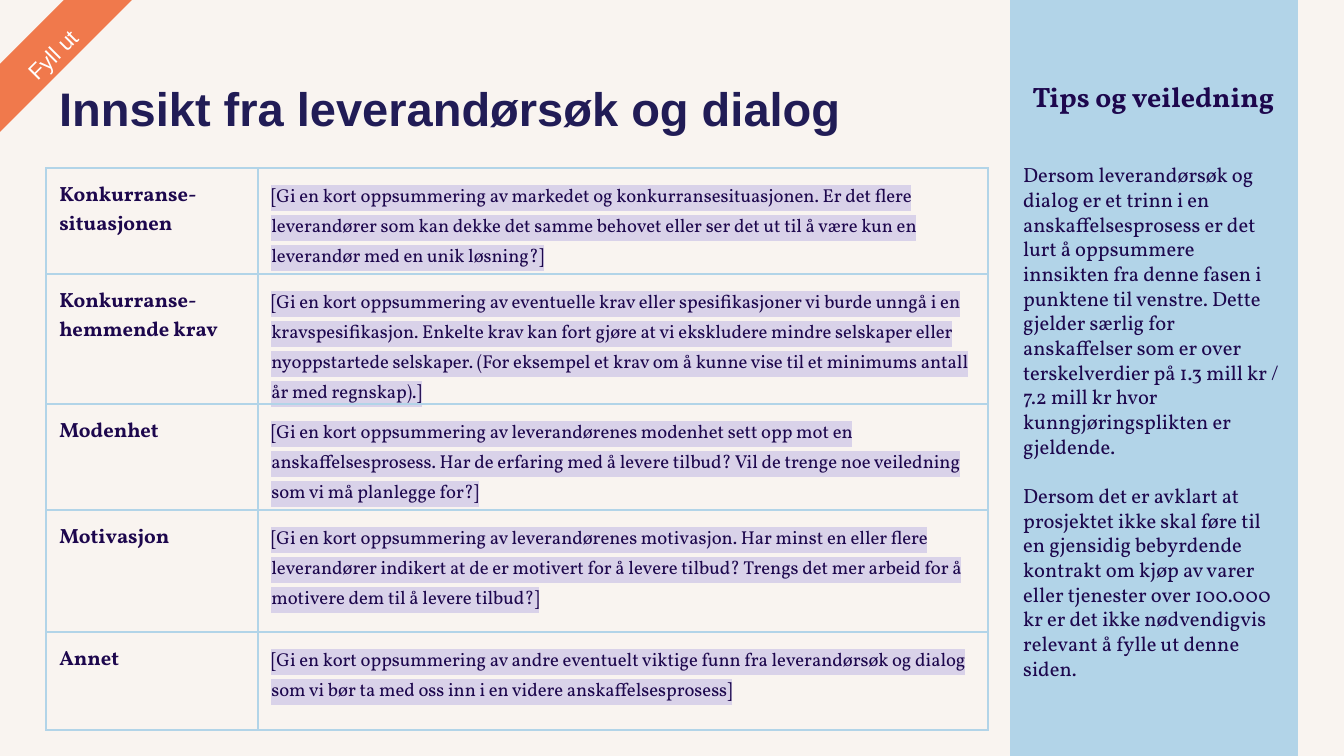
from lxml import etree
from pptx import Presentation, util as u
from pptx.dml.color import RGBColor
from pptx.enum import shapes, text
from pptx.oxml.ns import qn

PX = 914400 / 134.4
INK, NAVY, BLUE = "1D074D", "211C56", "B2D4E8"
SAND, LILAC, CORAL, WHITE = "F9F4F0", "D9D2E9", "F0794C", "FFFFFF"
SERIF, SANS = "Vollkorn", "Arial"
PAD = u.Inches(0.1)

ROWS = [
    (106, "Konkurranse- situasjonen",
     "[Gi en kort oppsummering av markedet og konkurransesituasjonen. Er det flere "
     "leverandører som kan dekke det samme behovet eller ser det ut til å være kun en "
     "leverandør med en unik løsning?]"),
    (106, "Konkurranse- hemmende krav",
     "[Gi en kort oppsummering av eventuelle krav eller spesifikasjoner vi burde unngå i en "
     "kravspesifikasjon. Enkelte krav kan fort gjøre at vi ekskludere mindre selskaper eller "
     "nyoppstartede selskaper. (For eksempel et krav om å kunne vise til et minimums antall "
     "år med regnskap).]"),
    (106, "Modenhet",
     "[Gi en kort oppsummering av leverandørenes modenhet sett opp mot en "
     "anskaffelsesprosess. Har de erfaring med å levere tilbud? Vil de trenge noe veiledning "
     "som vi må planlegge for?]"),
    (122, "Motivasjon",
     "[Gi en kort oppsummering av leverandørenes motivasjon. Har minst en eller flere "
     "leverandører indikert at de er motivert for å levere tilbud? Trengs det mer arbeid for å "
     "motivere dem til å levere tilbud?]"),
    (98, "Annet",
     "[Gi en kort oppsummering av andre eventuelt viktige funn fra leverandørsøk og dialog "
     "som vi bør ta med oss inn i en videre anskaffelsesprosess]"),
]
TIPS = [
    "Dersom leverandørsøk og dialog er et trinn i en anskaffelsesprosess er det lurt å "
    "oppsummere innsikten fra denne fasen i punktene til venstre. Dette gjelder særlig for "
    "anskaffelser som er over terskelverdier på 1.3 mill kr / 7.2 mill kr hvor "
    "kunngjøringsplikten er gjeldende.",
    "Dersom det er avklart at prosjektet ikke skal føre til en gjensidig bebyrdende kontrakt "
    "om kjøp av varer eller tjenester over 100.000 kr er det ikke nødvendigvis relevant å "
    "fylle ut denne siden.",
]


def px(*vals):
    return [u.Emu(round(v * PX)) for v in vals]


def paint(fill, color):
    fill.solid()
    fill.fore_color.rgb = RGBColor.from_string(color)


def style(para, size, face=SERIF, color=INK, bold=False, align=None, lead=None):
    font = para.font
    font.size, font.name, font.bold = u.Pt(size), face, bold
    font.color.rgb = RGBColor.from_string(color)
    para.alignment = align
    para.line_spacing = lead


def label(slide, box, lines, anchor=text.MSO_ANCHOR.TOP, gap=0, **look):
    item = slide.shapes.add_textbox(*px(*box))
    frame = item.text_frame
    frame.word_wrap = True
    frame.vertical_anchor = anchor
    frame.margin_left = frame.margin_right = PAD
    frame.margin_top = frame.margin_bottom = PAD
    frame.text = "\n".join(lines)
    for n, para in enumerate(frame.paragraphs):
        style(para, **look)
        if n:
            para.space_before = u.Pt(gap)
    return item


def block(slide, kind, box, color):
    item = slide.shapes.add_shape(kind, *px(*box))
    item.shadow.inherit = False
    paint(item.fill, color)
    item.line.fill.background()


def mark(run, color):
    tag = etree.SubElement(run._r.get_or_add_rPr(), qn("a:highlight"))
    etree.SubElement(tag, qn("a:srgbClr"), val=color)


def frame_cell(cell):
    props = cell._tc.get_or_add_tcPr()
    for side in ("lnL", "lnR", "lnT", "lnB"):
        line = etree.SubElement(props, qn("a:" + side), w=str(u.Pt(0.75)))
        fill = etree.SubElement(line, qn("a:solidFill"))
        etree.SubElement(fill, qn("a:srgbClr"), val=BLUE)
    cell.fill.background()
    cell.margin_left = cell.margin_right = PAD
    cell.margin_top = cell.margin_bottom = PAD


def grid(slide, x, y, widths):
    high = sum(row[0] for row in ROWS)
    table = slide.shapes.add_table(
        len(ROWS), len(widths), *px(x, y, sum(widths), high)).table
    table.first_row = table.horz_banding = False
    for col, width in zip(table.columns, px(*widths)):
        col.width = width
    for row, (tall, head, body) in zip(table.rows, ROWS):
        row.height = px(tall)[0]
        for cell, words in zip(row.cells, (head, body)):
            frame_cell(cell)
            cell.text = words
        left, right = (cell.text_frame.paragraphs[0] for cell in row.cells)
        style(left, 11, bold=True)
        style(right, 10, lead=1.15)
        mark(right.runs[0], LILAC)


def sidebar(slide, x, y, w, h):
    block(slide, shapes.MSO_SHAPE.RECTANGLE, (x, y, w, h), BLUE)
    label(slide, (x, y + 149, w, 528), TIPS, size=11, gap=13.2)
    label(slide, (x + 8, y + 66, w - 17, 60), ["Tips og veiledning"],
          size=15, bold=True, align=text.PP_ALIGN.CENTER)


def ribbon(slide, x, y, size):
    block(slide, shapes.MSO_SHAPE.DIAGONAL_STRIPE, (x, y, size, size), CORAL)
    note = label(slide, (x - 16, y + 30, 138, 50), ["Fyll ut"],
                 anchor=text.MSO_ANCHOR.MIDDLE, size=12, face=SANS, color=WHITE,
                 align=text.PP_ALIGN.CENTER, lead=1.15)
    note.rotation = 315


def main():
    deck = Presentation()
    deck.slide_width, deck.slide_height = px(1344, 756)
    slide = deck.slides.add_slide(deck.slide_layouts[6])
    paint(slide.background.fill, SAND)

    # Heading
    label(slide, (46, 66, 1252, 84), ["Innsikt fra leverandørsøk og dialog"],
          size=25.2, face=SANS, color=NAVY, bold=True)
    # Findings, with guidance beside them
    grid(slide, 46, 168, (212, 730))
    sidebar(slide, 1010, 0, 288, 756)
    # Corner ribbon
    ribbon(slide, -2, -2, 136)

    deck.save("out.pptx")


if __name__ == "__main__":
    main()
